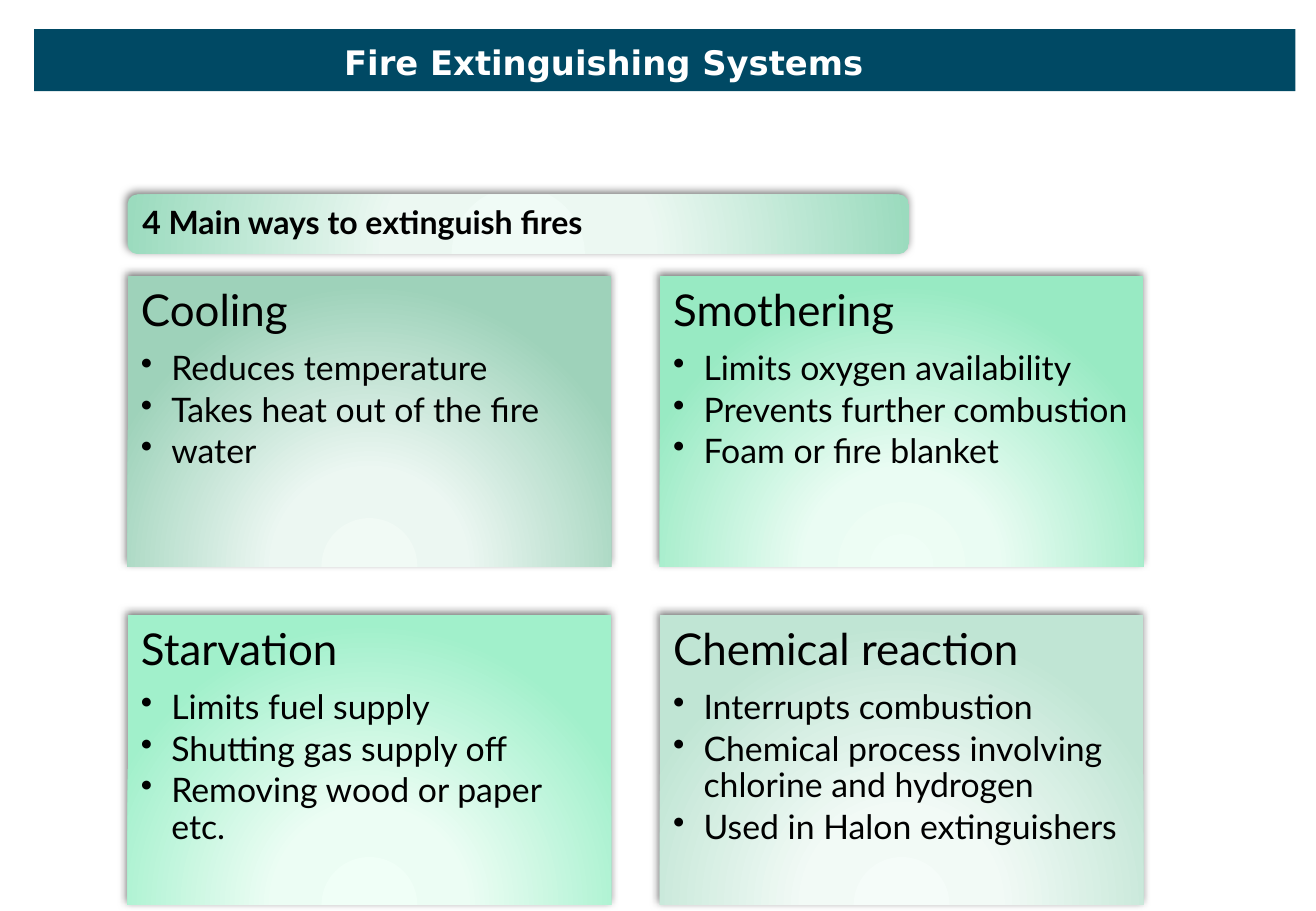
from dataclasses import dataclass

from pptx import Presentation, util as u
from pptx.dml.color import RGBColor
from pptx.enum import shapes, text
from pptx.oxml import parse_xml
from pptx.oxml.ns import nsdecls

PX = 9144


@dataclass(frozen=True)
class Theme:
    banner: str = "004964"
    white: str = "FFFFFF"
    ink: str = "000000"
    title_font: str = "DejaVu Sans"
    body_font: str = "Lato"
    title_size: int = 20
    intro_size: int = 19
    heading_size: int = 26
    bullet_size: int = 20
    intro_glow: tuple = ("F0FBF6", "ECF8F2", "9BDBBE")
    cooling_glow: tuple = ("F1FAF5", "ECF7F2", "9ED2BA")
    smothering_glow: tuple = ("EFFEF6", "EAFCF3", "98EAC3")
    starvation_glow: tuple = ("F0FFF7", "ECFDF4", "A1F0CB")
    chemical_glow: tuple = ("F5FCF9", "F2FAF6", "C0E5D4")


class SlideBuilder:
    """Draws the elements of the fire safety slide in one theme."""

    def __init__(self, deck, theme):
        self.theme = theme
        self.page = deck.slides.add_slide(deck.slide_layouts[5])

    def shape(self, kind, left, top, width, height):
        box = self.page.shapes.add_shape(kind, *(n * PX for n in (left, top, width, height)))
        box.shadow.inherit = False
        box.line.fill.background()
        return box

    def style(self, para, name, size, color, bold=False):
        para.font.name = name
        para.font.size = u.Pt(size)
        para.font.bold = bold
        para.font.color.rgb = RGBColor.from_string(color)

    def title(self, wording, left, top, width, height):
        title = self.page.shapes.title
        title.left, title.top, title.width, title.height = (
            n * PX for n in (left, top, width, height))
        frame = title.text_frame
        frame.text = wording
        frame.word_wrap = False
        frame.auto_size = text.MSO_AUTO_SIZE.SHAPE_TO_FIT_TEXT
        frame.vertical_anchor = text.MSO_ANCHOR.TOP
        para = frame.paragraphs[0]
        para.alignment = text.PP_ALIGN.CENTER
        self.style(para, self.theme.title_font, self.theme.title_size, self.theme.white, True)

    def banner(self, left, top, width, height):
        band = self.shape(shapes.MSO_SHAPE.RECTANGLE, left, top, width, height)
        band.fill.solid()
        band.fill.fore_color.rgb = RGBColor.from_string(self.theme.banner)
        self.page.shapes.title.element.addprevious(band.element)

    def glow(self, box, colors):
        stops = "".join(
            f'<a:gs pos="{place}"><a:srgbClr val="{color}"/></a:gs>'
            for place, color in zip((0, 34000, 100000), colors))
        box.fill.background()
        props = box.element.spPr
        props.replace(props.find("{*}noFill"), parse_xml(
            f'<a:gradFill {nsdecls("a")} rotWithShape="1"><a:gsLst>{stops}</a:gsLst>'
            '<a:path path="circle"><a:fillToRect l="50000" t="155000" r="50000" b="-55000"/>'
            '</a:path></a:gradFill>'))
        props.find("{*}effectLst").append(parse_xml(
            f'<a:outerShdw {nsdecls("a")} blurRad="{u.Pt(5)}" dist="{u.Pt(2)}" dir="14700000" '
            f'rotWithShape="0"><a:srgbClr val="{self.theme.ink}"><a:alpha val="50000"/>'
            '</a:srgbClr></a:outerShdw>'))

    def panel(self, kind, place, colors, inset, anchor):
        box = self.shape(kind, *place)
        self.glow(box, colors)
        frame = box.text_frame
        frame.word_wrap = True
        frame.vertical_anchor = anchor
        frame.margin_left = frame.margin_right = inset * PX
        frame.margin_top = frame.margin_bottom = inset * PX
        return frame

    def line(self, para, wording, size, after, bold=False, bullet=False):
        para.text = wording
        para.alignment = text.PP_ALIGN.LEFT
        para.line_spacing = 0.9
        para.space_after = u.Pt(after)
        if bullet:
            para.level = 1
            props = para._p.get_or_add_pPr()
            props.set("marL", str(25 * PX))
            props.set("indent", str(-25 * PX))
            props.append(parse_xml(f'<a:buChar {nsdecls("a")} char="•"/>'))
        self.style(para, self.theme.body_font, size, self.theme.ink, bold)

    def intro(self, wording, *place):
        frame = self.panel(shapes.MSO_SHAPE.ROUNDED_RECTANGLE, place, self.theme.intro_glow,
                           10, text.MSO_ANCHOR.MIDDLE)
        self.line(frame.paragraphs[0], wording, self.theme.intro_size, 7, bold=True)

    def card(self, heading, bullets, colors, *place):
        frame = self.panel(shapes.MSO_SHAPE.RECTANGLE, place, colors, 11, text.MSO_ANCHOR.TOP)
        self.line(frame.paragraphs[0], heading, self.theme.heading_size, 9)
        for bullet in bullets:
            self.line(frame.add_paragraph(), bullet, self.theme.bullet_size, 3, bullet=True)


def main():
    deck = Presentation()
    deck.slide_width, deck.slide_height = 1083 * PX, 750 * PX
    theme = Theme()
    slide = SlideBuilder(deck, theme)
    slide.title("Fire Extinguishing Systems", 273, 29, 448, 44)
    slide.banner(28, 24, 1038, 51)
    methods = [
        ("Cooling", theme.cooling_glow,
         ["Reduces temperature", "Takes heat out of the fire", "water"]),
        ("Smothering", theme.smothering_glow,
         ["Limits oxygen availability", "Prevents further combustion", "Foam or fire blanket"]),
        ("Starvation", theme.starvation_glow,
         ["Limits fuel supply", "Shutting gas supply off", "Removing wood or paper etc."]),
        ("Chemical reaction", theme.chemical_glow,
         ["Interrupts combustion", "Chemical process involving chlorine and hydrogen",
          "Used in Halon extinguishers"]),
    ]
    for index, (heading, colors, bullets) in enumerate(methods):
        row, column = divmod(index, 2)
        slide.card(heading, bullets, colors, 105 + 438 * column, 227 + 279 * row, 398, 239)
    slide.intro("4 Main ways to extinguish fires", 105, 160, 643, 49)
    deck.save("out.pptx")


if __name__ == "__main__":
    main()
